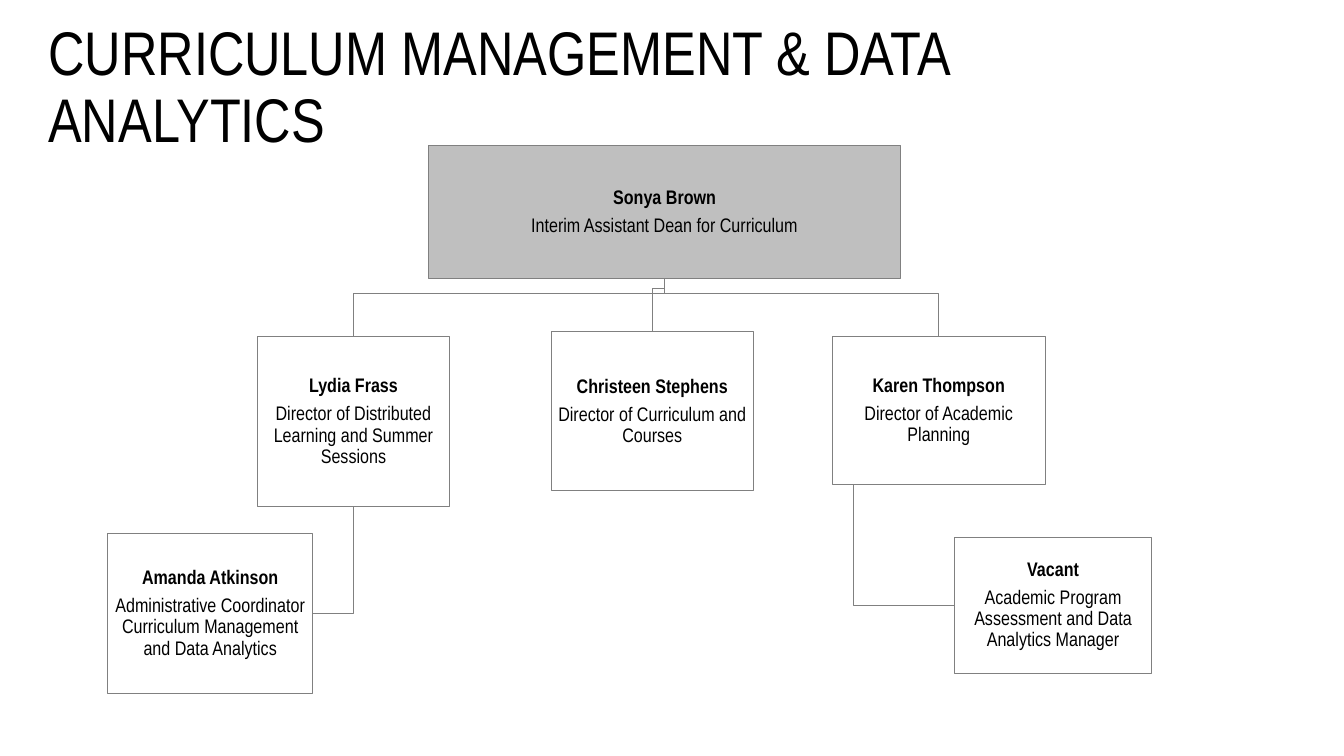
from dataclasses import dataclass

from pptx import Presentation
from pptx.dml.color import RGBColor
from pptx.enum.shapes import MSO_SHAPE
from pptx.enum.text import MSO_ANCHOR as Anchor, PP_ALIGN as Align
from pptx.util import Cm, Pt

BLACK = RGBColor(0x00, 0x00, 0x00)
WHITE = RGBColor(0xFF, 0xFF, 0xFF)
SILVER = RGBColor(0xBF, 0xBF, 0xBF)
GRAY = RGBColor(0x80, 0x80, 0x80)
FONT = "Arial Narrow"
BEND_ABOVE_CHILD = 1.09
STUB_SHARE = 0.1


@dataclass
class Box:
    """A rectangle measured in centimetres."""
    left: float
    top: float
    width: float
    height: float

    @property
    def right(self):
        return self.left + self.width

    @property
    def bottom(self):
        return self.top + self.height

    @property
    def center(self):
        return self.left + self.width / 2

    @property
    def middle(self):
        return self.top + self.height / 2

    def lengths(self):
        return [Cm(side) for side in (self.left, self.top, self.width, self.height)]


DEAN = Box(10.8, 3.66, 11.9, 3.35)
DISTRIBUTED = Box(6.48, 8.48, 4.86, 4.29)
COURSES = Box(13.9, 8.36, 5.08, 4.01)
PLANNING = Box(20.98, 8.48, 5.36, 3.73)
COORDINATOR = Box(2.72, 13.44, 5.16, 4.04)
ASSESSMENT = Box(24.05, 13.54, 4.98, 3.43)

STAFF = [
    (DEAN, "Sonya Brown", "Interim Assistant Dean for Curriculum", SILVER),
    (DISTRIBUTED, "Lydia Frass",
     "Director of Distributed Learning and Summer Sessions", WHITE),
    (COORDINATOR, "Amanda Atkinson",
     "Administrative Coordinator Curriculum Management and Data Analytics", WHITE),
    (COURSES, "Christeen Stephens", "Director of Curriculum and Courses", WHITE),
    (PLANNING, "Karen Thompson", "Director of Academic Planning", WHITE),
    (ASSESSMENT, "Vacant",
     "Academic Program Assessment and Data Analytics Manager", WHITE),
]


def format_paragraph(paragraph, size, bold=False):
    paragraph.line_spacing = 0.9
    font = paragraph.runs[0].font
    font.name = FONT
    font.size = Pt(size)
    font.bold = bold
    font.color.rgb = BLACK


def outline(shape):
    shape.shadow.inherit = False
    shape.line.color.rgb = GRAY
    shape.line.width = Pt(0.75)


def add_title(slide, box, text):
    text_frame = slide.shapes.add_textbox(*box.lengths()).text_frame
    text_frame.word_wrap = True
    text_frame.vertical_anchor = Anchor.MIDDLE
    text_frame.text = text
    format_paragraph(text_frame.paragraphs[0], 44)


def add_elbow(slide, points):
    """Draw an open line through points given in centimetres."""
    start, *others = [(Cm(x), Cm(y)) for x, y in points]
    builder = slide.shapes.build_freeform(*start)
    builder.add_line_segments(others, close=False)
    shape = builder.convert_to_shape()
    shape.fill.background()
    outline(shape)


def add_branch(slide, parent, child):
    """Join the bottom of the parent to the top of the child."""
    bend = child.top - BEND_ABOVE_CHILD
    add_elbow(slide, [(parent.center, parent.bottom), (parent.center, bend),
                      (child.center, bend), (child.center, child.top)])


def add_side_branch(slide, parent, start_x, child, child_edge):
    """Join the bottom of the parent to a side edge of the child."""
    add_elbow(slide, [(start_x, parent.bottom), (start_x, child.middle),
                      (child_edge, child.middle)])


def add_person(slide, box, name, role, fill):
    shape = slide.shapes.add_shape(MSO_SHAPE.RECTANGLE, *box.lengths())
    shape.fill.solid()
    shape.fill.fore_color.rgb = fill
    outline(shape)
    text_frame = shape.text_frame
    text_frame.word_wrap = True
    text_frame.vertical_anchor = Anchor.MIDDLE
    text_frame.margin_left = text_frame.margin_right = Cm(0.02)
    text_frame.margin_top = text_frame.margin_bottom = Cm(0.02)
    text_frame.text = f"{name}\n{role}"
    for paragraph, bold in zip(text_frame.paragraphs, (True, False)):
        paragraph.alignment = Align.CENTER
        paragraph.space_after = Pt(4.9)
        format_paragraph(paragraph, 14, bold)


def add_chart_of_staff(slide):
    stub = PLANNING.left + STUB_SHARE * PLANNING.width
    add_side_branch(slide, PLANNING, stub, ASSESSMENT, ASSESSMENT.left)
    add_side_branch(slide, DISTRIBUTED, DISTRIBUTED.center,
                    COORDINATOR, COORDINATOR.right)
    for director in (PLANNING, COURSES, DISTRIBUTED):
        add_branch(slide, DEAN, director)
    for person in STAFF:
        add_person(slide, *person)


def main():
    presentation = Presentation()
    presentation.slide_width = Cm(33.87)
    presentation.slide_height = Cm(19.05)
    slide = presentation.slides.add_slide(presentation.slide_layouts[6])
    add_title(slide, Box(0.97, 0.41, 29.21, 3.68),
              "CURRICULUM MANAGEMENT & DATA ANALYTICS")
    add_chart_of_staff(slide)
    presentation.save("out.pptx")


if __name__ == "__main__":
    main()
